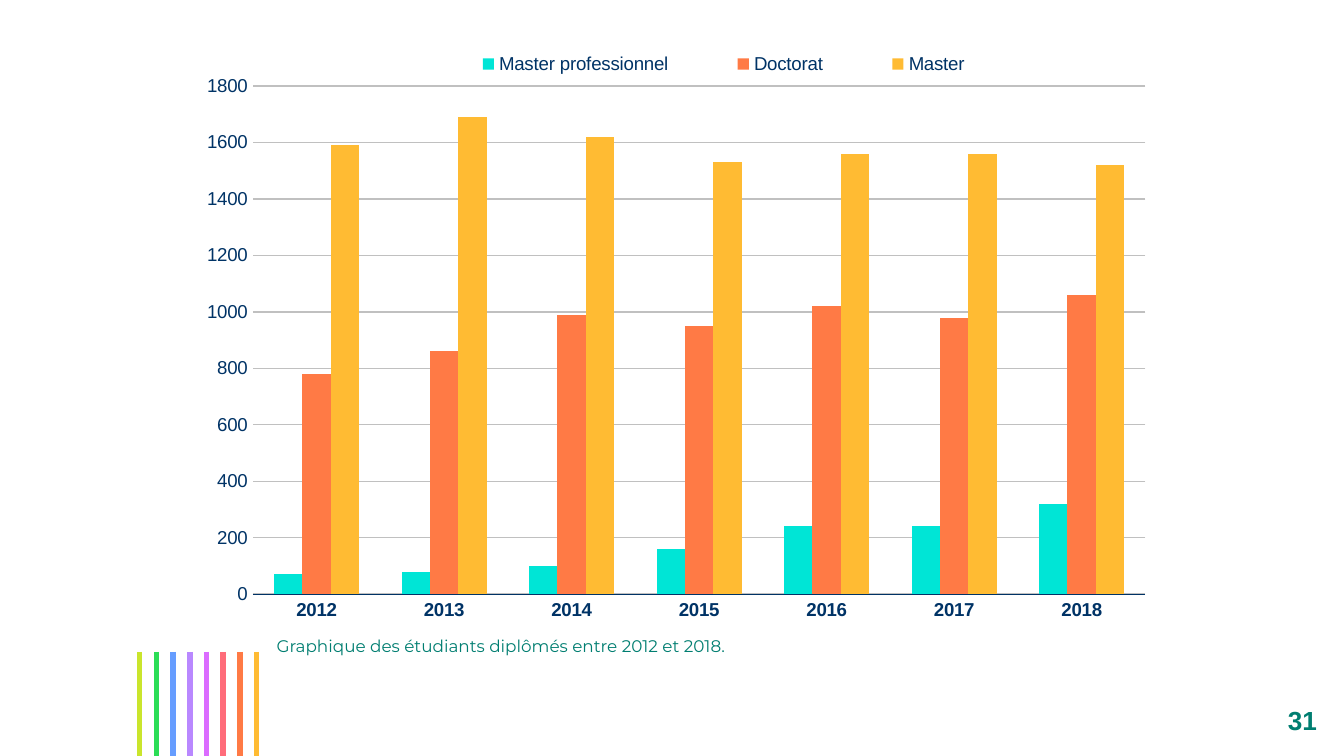
from lxml.etree import SubElement
from pptx import Presentation
from pptx.chart.data import CategoryChartData
from pptx.dml.color import RGBColor
from pptx.enum.chart import XL_CHART_TYPE, XL_LEGEND_POSITION, XL_TICK_MARK
from pptx.enum.shapes import MSO_CONNECTOR, MSO_SHAPE
from pptx.enum.text import MSO_ANCHOR, PP_ALIGN
from pptx.oxml import parse_xml
from pptx.oxml.ns import nsdecls, qn
from pptx.util import Cm, Pt

COLORS = {
    "white": "FFFFFF", "teal": "007E71", "navy": "003366", "grid": "C0C0C0",
    "lime": "CAE52C", "green": "2CDD56", "blue": "669DFF", "violet": "B988FF",
    "magenta": "DB6CFF", "rose": "FF6C7A", "orange": "FF7A45",
    "amber": "FFBB33", "turquoise": "00E5D6",
}
STRIPES = ["lime", "green", "blue", "violet", "magenta", "rose", "orange", "amber"]
YEARS = [str(year) for year in range(2012, 2019)]
GRADUATES = [
    ("Master professionnel", "turquoise", [70, 80, 100, 160, 240, 240, 320]),
    ("Doctorat", "orange", [780, 860, 990, 950, 1020, 980, 1060]),
    ("Master", "amber", [1590, 1690, 1620, 1530, 1560, 1560, 1520]),
]


class SlideBuilder:
    def __init__(self, slide):
        self.slide = slide

    def color(self, name):
        return RGBColor.from_string(COLORS[name])

    def style_font(self, font, size, color, name="Arial", bold=False):
        font.size, font.name, font.bold = Pt(size), name, bold
        font.color.rgb = self.color(color)

    def add_line(self, x, top, bottom, color, width):
        line = self.slide.shapes.add_connector(
            MSO_CONNECTOR.STRAIGHT, Cm(x), Cm(top), Cm(x), Cm(bottom))
        line.line.color.rgb = self.color(color)
        line.line.width = Pt(width)
        SubElement(line._element.spPr, qn("a:effectLst"))

    def add_text(self, shape, text, margins, size, **style):
        frame = shape.text_frame
        frame.word_wrap = True
        (frame.margin_left, frame.margin_top,
         frame.margin_right, frame.margin_bottom) = map(Cm, margins)
        paragraph = frame.paragraphs[0]
        run = paragraph.add_run()
        run.text = text
        self.style_font(run.font, size, "teal", **style)
        return frame, paragraph

    def add_caption(self, text, box):
        shape = self.slide.shapes.add_textbox(*map(Cm, box))
        frame, paragraph = self.add_text(shape, text, (0, 0, 0, 0.25), 9, name="Montserrat")
        frame.vertical_anchor = MSO_ANCHOR.TOP
        paragraph.space_after = Pt(10)

    def add_page_number(self, text, box):
        shape = self.slide.shapes.add_shape(MSO_SHAPE.RECTANGLE, *map(Cm, box))
        shape.shadow.inherit = False
        shape.fill.solid()
        shape.fill.fore_color.rgb = self.color("white")
        shape.line.fill.background()
        frame, paragraph = self.add_text(shape, text, [0.25] * 4, 14, bold=True)
        frame.vertical_anchor = MSO_ANCHOR.MIDDLE
        paragraph.alignment = PP_ALIGN.CENTER

    def make_layout(self, x, y, width, height, inner=False):
        target = '<c:layoutTarget val="inner"/>' if inner else ""
        return parse_xml(
            f'<c:layout {nsdecls("c")}><c:manualLayout>{target}'
            '<c:xMode val="edge"/><c:yMode val="edge"/>'
            f'<c:x val="{x}"/><c:y val="{y}"/><c:w val="{width}"/><c:h val="{height}"/>'
            '</c:manualLayout></c:layout>')

    def add_column_chart(self, categories, series_rows, box):
        data = CategoryChartData()
        data.categories = categories
        for name, _, values in series_rows:
            data.add_series(name, values)
        chart = self.slide.shapes.add_chart(
            XL_CHART_TYPE.COLUMN_CLUSTERED, *map(Cm, box), data).chart
        self.style_font(chart.font, 10, "navy")
        chart.has_title = False

        # Columns
        plot = chart.plots[0]
        plot.gap_width, plot.overlap, plot.vary_by_categories = 150, 0, False
        for series, (_, color, _) in zip(plot.series, series_rows):
            series.format.fill.solid()
            series.format.fill.fore_color.rgb = self.color(color)

        # Axes
        category_axis, value_axis = chart.category_axis, chart.value_axis
        for axis in (category_axis, value_axis):
            axis.major_tick_mark = axis.minor_tick_mark = XL_TICK_MARK.NONE
            self.style_font(axis.tick_labels.font, 10, "navy", bold=axis is category_axis)
        category_axis.format.line.color.rgb = self.color("navy")
        category_axis.format.line.width = Pt(0.25)
        value_axis.format.line.fill.background()
        value_axis.minimum_scale, value_axis.maximum_scale = 0, 1800
        value_axis.major_unit = 200
        gridline = value_axis.major_gridlines.format.line
        gridline.color.rgb = self.color("grid")
        gridline.width = Pt(0.75)

        # Legend
        chart.has_legend = True
        legend = chart.legend
        legend.position = XL_LEGEND_POSITION.TOP
        legend.include_in_layout = False
        self.style_font(legend.font, 10, "navy")

        # Fixed positions of the plot and the legend
        plot_area = chart._chartSpace.chart.plotArea
        for old in plot_area.findall(qn("c:layout")):
            plot_area.remove(old)
        plot_area.insert(0, self.make_layout(0.07, 0.09, 0.91, 0.81, inner=True))
        for old in legend._element.findall(qn("c:layout")):
            legend._element.remove(old)
        legend._element.find(qn("c:legendPos")).addnext(
            self.make_layout(0.24, 0.03, 0.62, 0.05))


def main():
    presentation = Presentation()
    presentation.slide_width, presentation.slide_height = Cm(25.4), Cm(14.29)
    builder = SlideBuilder(presentation.slides.add_slide(presentation.slide_layouts[6]))

    # Coloured stripes at the foot of the slide
    first, last = 2.64, 4.85
    step = (last - first) / (len(STRIPES) - 1)
    for index, color in enumerate(STRIPES):
        builder.add_line(first + index * step, 12.32, 14.29, color, 3)

    # Page number, caption and chart
    builder.add_page_number("31", (23.83, 12.95, 1.57, 1.34))
    builder.add_caption("Graphique des étudiants diplômés entre 2012 et 2018.",
                        (5.23, 12.01, 9.91, 1.68))
    builder.add_column_chart(YEARS, GRADUATES, (3.48, 0.56, 18.54, 11.86))

    presentation.save("out.pptx")


if __name__ == "__main__":
    main()
